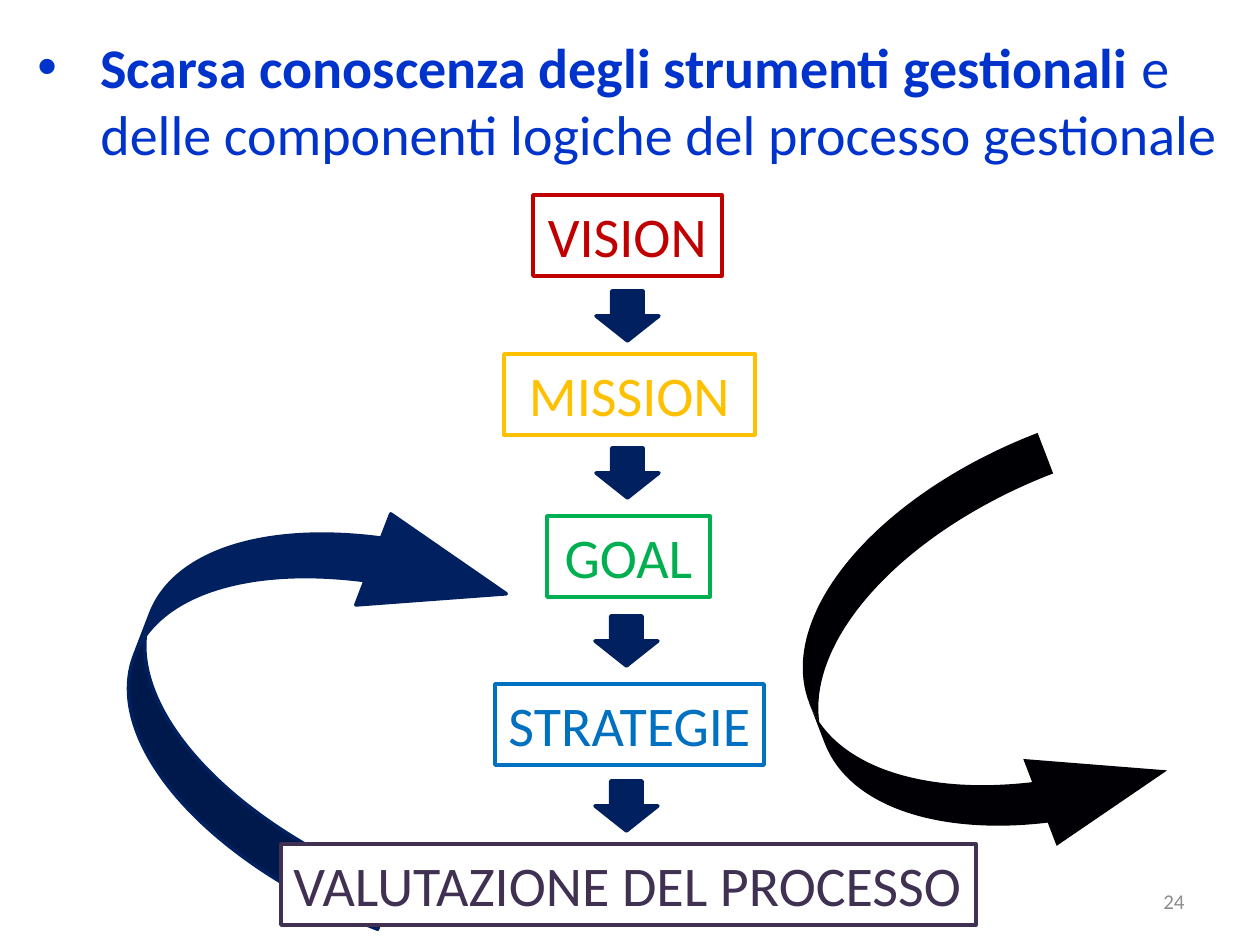
"""Build a slide on the steps of the management process."""
from dataclasses import dataclass

from lxml import etree
from pptx import Presentation
from pptx import util as u
from pptx.dml.color import RGBColor
from pptx.enum import shapes, text
from pptx.oxml.ns import qn

PX = 914400 / 126
NAVY, BLUE, GREY = "002060", "0033CC", "8C8C8C"
LEFT, CENTER, RIGHT = text.PP_ALIGN.LEFT, text.PP_ALIGN.CENTER, text.PP_ALIGN.RIGHT


@dataclass
class Step:
    label: str
    left: int
    top: int
    width: int
    color: str
    fill: str | None = None
    align: text.PP_ALIGN = CENTER


@dataclass
class Loop:
    left: int
    top: int
    height: int
    rotation: int
    fill: str
    line: str | None = None
    flip: bool = False


STEPS = [
    Step("VISION", 533, 195, 189, "C00000"),
    Step("MISSION", 504, 354, 251, "FFC000"),
    Step("GOAL", 547, 516, 163, "00B050"),
    Step("STRATEGIE", 495, 684, 269, "0070C0"),
    Step("VALUTAZIONE DEL PROCESSO", 281, 844, 695, "403152", "FFFFFF", LEFT),
]
ARROWS = [(596, 291), (596, 448), (595, 616), (595, 781)]
FEEDBACK = Loop(95, 518, 325, -69, NAVY, NAVY)
FORWARD = Loop(762, 524, 310, 69, "000005", flip=True)


def px(n: int) -> u.Emu:
    return u.Emu(round(n * PX))


def rgb(color: str) -> RGBColor:
    return RGBColor.from_string(color)


def add_run(p, words: str, *, size: int, color: str, bold: bool = False) -> None:
    r = p.add_run()
    r.text = words
    r.font.name, r.font.size, r.font.bold = "Calibri", u.Pt(size), bold
    r.font.color.rgb = rgb(color)


def add_preset(s, kind, box: tuple, *, fill: str | None = None, line: str | None = None):
    sp = s.shapes.add_shape(kind, *map(px, box))
    sp.shadow.inherit = False
    if fill:
        sp.fill.solid()
        sp.fill.fore_color.rgb = rgb(fill)
    else:
        sp.fill.background()
    if line:
        sp.line.color.rgb = rgb(line)
        sp.line.width = u.Pt(2)
    else:
        sp.line.fill.background()
    return sp


def add_step(s, step: Step) -> None:
    box = step.left, step.top, step.width, 81
    sp = add_preset(s, shapes.MSO_SHAPE.RECTANGLE, box, fill=step.fill, line=step.color)
    tf = sp.text_frame
    tf.word_wrap = False
    tf.vertical_anchor = text.MSO_ANCHOR.TOP
    p = tf.paragraphs[0]
    p.alignment = step.align
    add_run(p, step.label, size=32, color=step.color)


def add_loop(s, loop: Loop) -> None:
    box = loop.left, loop.top, 408, loop.height
    sp = add_preset(s, shapes.MSO_SHAPE.CURVED_DOWN_ARROW, box, fill=loop.fill, line=loop.line)
    for i, value in enumerate((0.14, 0.3, 0.42)):
        sp.adjustments[i] = value
    sp.rotation = loop.rotation
    if loop.flip:
        sp._element.spPr.find(qn("a:xfrm")).set("flipV", "1")


def add_title(s) -> None:
    tf = s.shapes.add_textbox(*map(px, (25, 26, 1206, 149))).text_frame
    tf.word_wrap = True
    p = tf.paragraphs[0]
    ppr = p._p.get_or_add_pPr()
    ppr.set("marL", str(px(63)))
    ppr.set("indent", str(px(-63)))
    etree.SubElement(ppr, qn("a:buFont")).set("typeface", "Arial")
    etree.SubElement(ppr, qn("a:buChar")).set("char", "•")
    add_run(p, "Scarsa conoscenza degli strumenti gestionali ", size=32, color=BLUE, bold=True)
    add_run(p, "e delle componenti logiche del processo gestionale", size=32, color=BLUE)


def add_page_number(s) -> None:
    tf = s.shapes.add_textbox(*map(px, (903, 876, 294, 50))).text_frame
    tf.word_wrap = True
    tf.vertical_anchor = text.MSO_ANCHOR.MIDDLE
    p = tf.paragraphs[0]
    p.alignment = RIGHT
    add_run(p, "24", size=12, color=GREY)


def main() -> None:
    prs = Presentation()
    prs.slide_width, prs.slide_height = px(1260), px(945)
    s = prs.slides.add_slide(prs.slide_layouts[6])
    add_title(s)
    add_page_number(s)
    add_loop(s, FEEDBACK)
    for step in STEPS:
        add_step(s, step)
    for left, top in ARROWS:
        add_preset(s, shapes.MSO_SHAPE.DOWN_ARROW, (left, top, 63, 50), fill=NAVY, line=NAVY)
    add_loop(s, FORWARD)
    prs.save("out.pptx")


if __name__ == "__main__":
    main()
